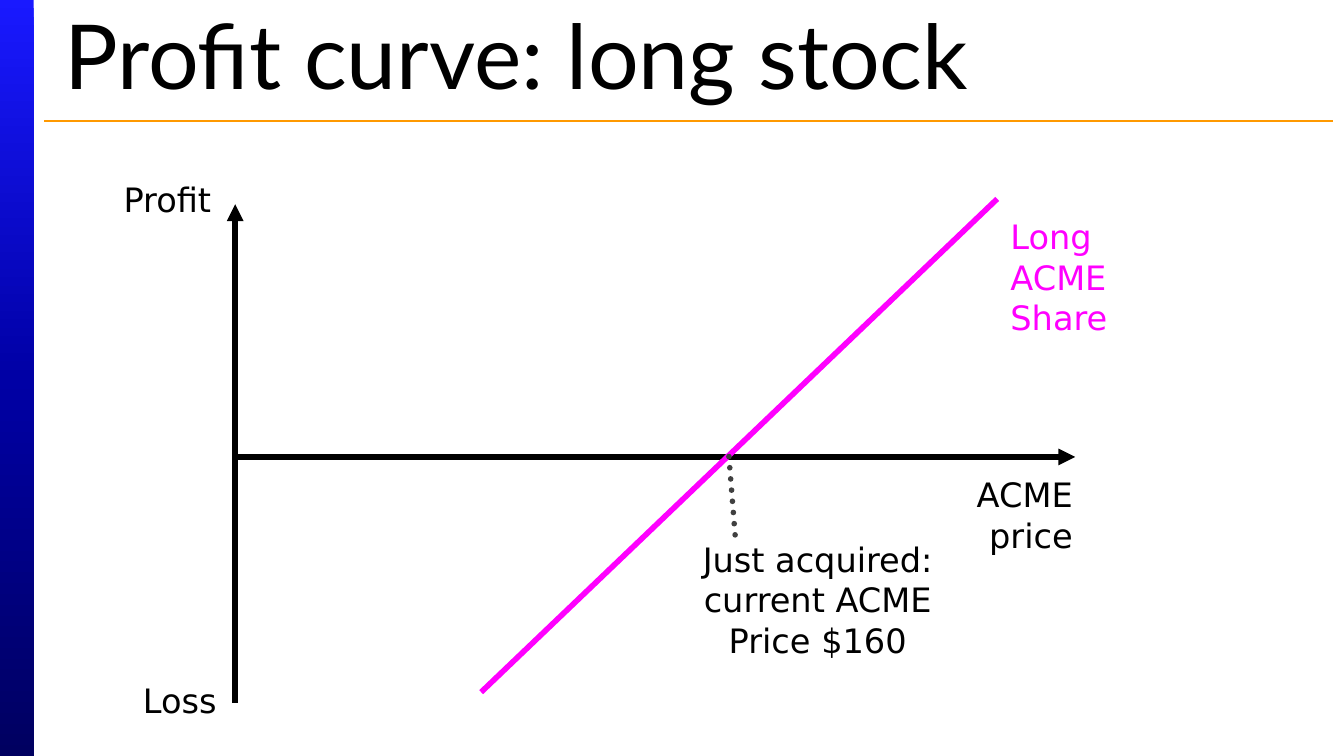
from copy import deepcopy

from lxml import etree
from pptx import Presentation
from pptx import util as u
from pptx.dml.color import RGBColor
from pptx.enum import dml, shapes, text
from pptx.oxml.ns import qn

INK = {"black": "000000", "pink": "FF00FF", "gray": "404040", "gold": "FF9900",
       "top": "1919FF", "mid": "0000A5", "low": "000060"}
ALIGN = {"l": text.PP_ALIGN.LEFT, "c": text.PP_ALIGN.CENTER, "r": text.PP_ALIGN.RIGHT}


def rgb(name):
    return RGBColor.from_string(INK[name])


def put(parent, box, words, size=18, font="DejaVu Sans", ink="black", align="l",
        fit=True, mid=False):
    area = parent.add_textbox(*map(u.Inches, box))
    frame = area.text_frame
    frame.word_wrap = True
    frame.auto_size = text.MSO_AUTO_SIZE.SHAPE_TO_FIT_TEXT if fit else text.MSO_AUTO_SIZE.NONE
    frame.vertical_anchor = text.MSO_ANCHOR.MIDDLE if mid else text.MSO_ANCHOR.TOP
    para = frame.paragraphs[0]
    para.alignment = ALIGN[align]
    run = para.add_run()
    run.text = words
    run.font.size = u.Pt(size)
    run.font.name = font
    run.font.color.rgb = rgb(ink)


def draw(parent, start, end, ink="black", width=3, dots=False, arrow=False):
    """Line from start to end; an arrow points at start."""
    line = parent.add_connector(shapes.MSO_CONNECTOR.STRAIGHT,
                                *map(u.Inches, (*start, *end)))
    line.line.color.rgb = rgb(ink)
    line.line.width = u.Pt(width)
    props = line._element.spPr
    edge = props.find(qn("a:ln"))
    if dots:
        line.line.dash_style = dml.MSO_LINE.ROUND_DOT
        edge.set("cap", "rnd")
    if arrow:
        etree.SubElement(edge, qn("a:headEnd"), type="triangle")
    etree.SubElement(props, qn("a:effectLst"))


def side(parent, box):
    # Blue bar, fading from top to bottom
    bar = parent.add_shape(shapes.MSO_SHAPE.RECTANGLE, *map(u.Inches, box))
    bar.shadow.inherit = False
    bar.line.fill.background()
    bar.fill.gradient()
    bar.fill.gradient_angle = 270
    stops = bar._element.spPr.find(".//" + qn("a:gsLst"))
    stops.insert(1, deepcopy(stops[0]))
    for stop, ink, pos in zip(bar.fill.gradient_stops, ("top", "mid", "low"), (0, 0.5, 1)):
        stop.color.rgb = rgb(ink)
        stop.position = pos


def head(parent, box):
    # Title with a thin rule below
    x, y, w, h = box
    put(parent, box, "Profit curve: long stock", size=48, font="Lato", fit=False, mid=True)
    draw(parent, (x - 0.05, y + 0.75), (x + w - 0.04, y + 0.75), ink="gold", width=0.75)


def plot(slide, box):
    x, y, w, h = box
    zero = y + 1.88
    group = slide.shapes.add_group_shape().shapes

    # Axes
    draw(group, (x, y), (x, y + h), arrow=True)
    draw(group, (x + w, zero), (x, zero), arrow=True)
    put(group, (x + 5.25, zero + 0.08, 1.08, 0.71), "ACME price", align="r")

    # Profit line
    draw(group, (x + 1.83, y + 3.63), (x + 5.67, y - 0.04), ink="pink")
    put(group, (x + 5.67, y + 0.04, 1.5, 1.01), "Long ACME Share", ink="pink")

    # Break-even mark
    draw(group, (x + 3.72, zero + 0.58), (x + 3.67, zero - 0.05), ink="gray", dots=True)
    put(group, (x + 3.25, zero + 0.56, 2.17, 1.01),
        "Just acquired: current ACME Price $160", align="c")

    # Ends of the profit axis
    put(slide.shapes, (x - 1.25, y - 0.24, 1.17, 0.4), "Profit", align="r")
    put(slide.shapes, (x - 1.21, y + 3.49, 1.17, 0.4), "Loss", align="r")


def main():
    deck = Presentation()
    deck.slide_width = u.Inches(10)
    deck.slide_height = deck.slide_width * 9 // 16
    slide = deck.slides.add_slide(deck.slide_layouts[6])
    side(slide.shapes, (0, 0, 0.25, deck.slide_height / u.Inches(1)))
    head(slide.shapes, (0.38, 0.15, 9.58, 0.5))
    plot(slide, (1.75, 1.52, 6.25, 3.71))
    deck.save("out.pptx")


if __name__ == "__main__":
    main()
